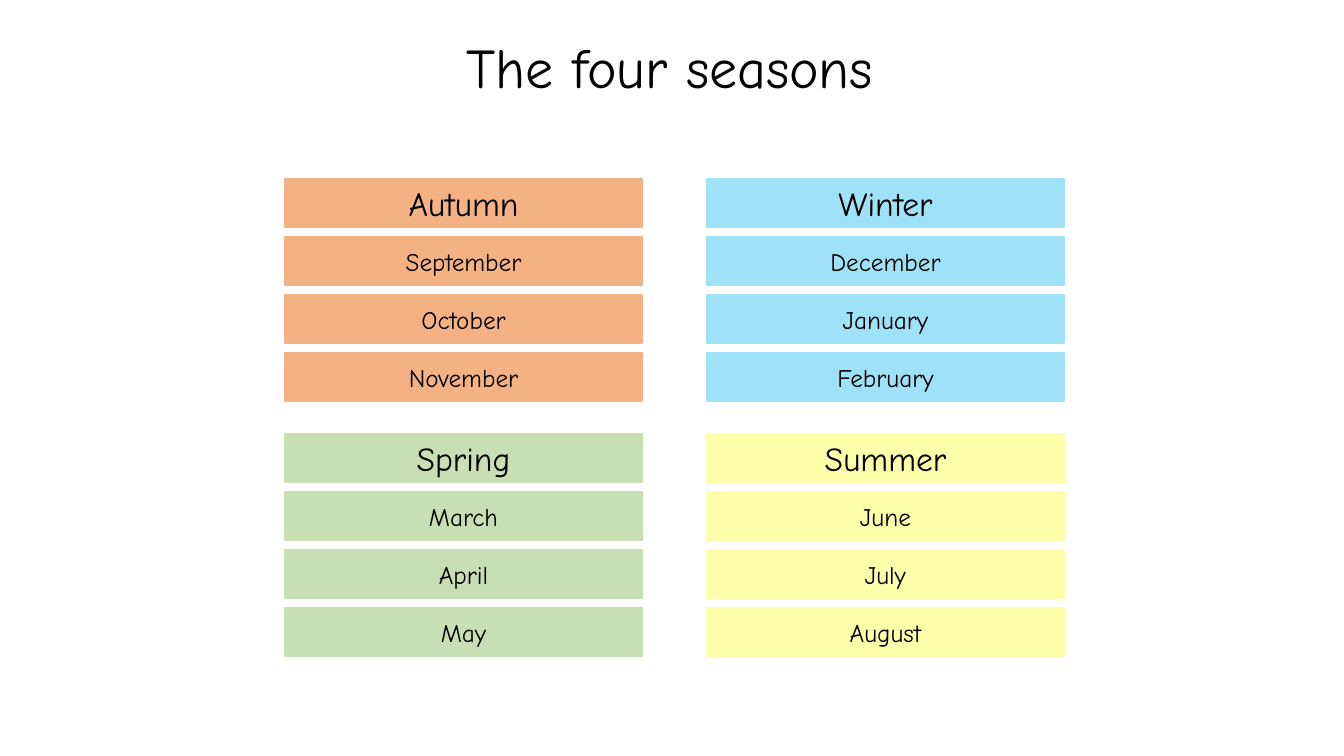
from pptx import Presentation
from pptx import util as u
from pptx.dml.color import RGBColor
from pptx.enum import shapes, text

PX = 914400 / 100.8
FONT = "Comic Neue"

# Season grid
COLUMNS = (285, 707)
ROWS = (179, 434)
BAR_WIDTH, BAR_HEIGHT, BAR_PITCH = 357, 48, 58

SEASONS = [
    ("Autumn", "F4B183", ("September", "October", "November")),
    ("Winter", "9FE2F7", ("December", "January", "February")),
    ("Spring", "C6DFB3", ("March", "April", "May")),
    ("Summer", "FFFFAB", ("June", "July", "August")),
]


def px(length):
    return u.Emu(round(length * PX))


def rgb(hex_color):
    return RGBColor.from_string(hex_color)


def write(shape, words, size, color="000000", spacing=None):
    frame = shape.text_frame
    frame.word_wrap = True
    frame.auto_size = text.MSO_AUTO_SIZE.NONE
    frame.vertical_anchor = text.MSO_ANCHOR.MIDDLE
    paragraph = frame.paragraphs[0]
    paragraph.alignment = text.PP_ALIGN.CENTER
    paragraph.line_spacing = spacing
    run = paragraph.add_run()
    run.text = words
    run.font.size = u.Pt(size)
    run.font.name = FONT
    run.font.color.rgb = rgb(color)


def add_title(slide, words):
    title = slide.shapes.title
    title.left, title.top, title.width, title.height = map(px, (52, 18, 1236, 105))
    write(title, words, size=40, spacing=0.9)


def add_bar(slide, left, top, words, color, size):
    bar = slide.shapes.add_shape(shapes.MSO_SHAPE.RECTANGLE, px(left), px(top),
                                 px(BAR_WIDTH), px(BAR_HEIGHT))
    bar.shadow.inherit = False
    bar.fill.solid()
    bar.fill.fore_color.rgb = rgb(color)
    bar.line.color.rgb = rgb(color)
    bar.line.width = u.Pt(1)
    write(bar, words, size=size)


def add_season(slide, left, top, season, color, months):
    for row, words in enumerate((season, *months)):
        add_bar(slide, left, top + row * BAR_PITCH, words, color,
                size=18 if row else 24)


def main():
    deck = Presentation()
    deck.slide_width, deck.slide_height = px(1344), px(756)
    slide = deck.slides.add_slide(deck.slide_layouts[5])

    add_title(slide, "The four seasons")

    # Two seasons to a row
    for index, (season, color, months) in enumerate(SEASONS):
        row, column = divmod(index, len(COLUMNS))
        add_season(slide, COLUMNS[column], ROWS[row], season, color, months)

    deck.save("out.pptx")


if __name__ == "__main__":
    main()
